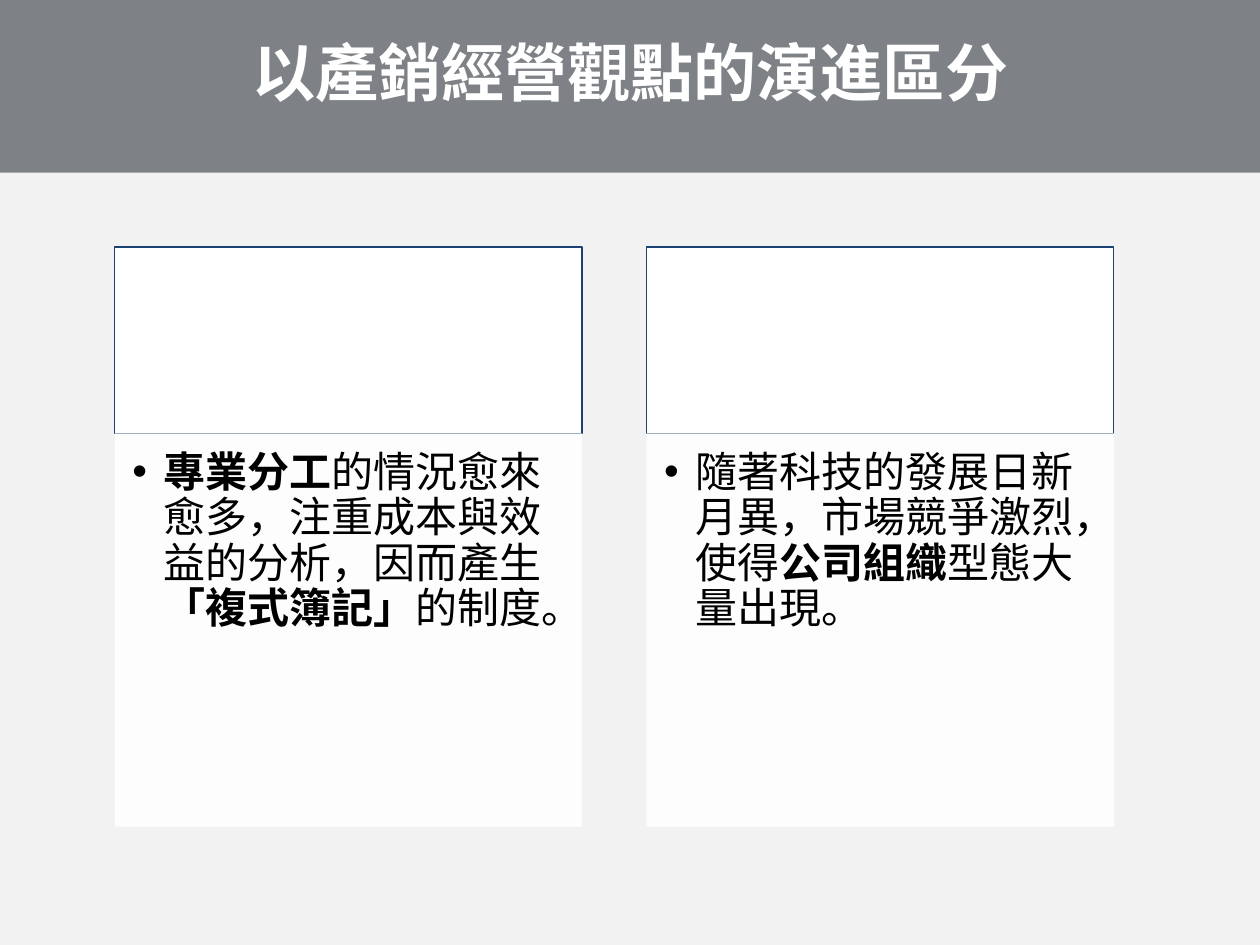
from lxml.etree import SubElement
from pptx import Presentation
from pptx.dml.color import RGBColor
from pptx.enum.shapes import MSO_SHAPE as Shape
from pptx.enum.text import MSO_ANCHOR as Anchor, MSO_AUTO_SIZE as AutoSize, PP_ALIGN as Align
from pptx.oxml.ns import qn
from pptx.util import Inches, Pt

TITLE = "以產銷經營觀點的演進區分"
# Each column is a list of (text, bold) runs.
COLUMNS = [
    [("專業分工", True), ("的情況愈來愈多，注重成本與效益的分析，因而產生", False),
     ("「複式簿記」", True), ("的制度。", False)],
    [("隨著科技的發展日新月異，市場競爭激烈，使得", False),
     ("公司組織", True), ("型態大量出現。", False)],
]
LEFT, COLUMN_STEP, COLUMN_WIDTH = 0.91, 4.22, 3.71
HEADER_TOP, HEADER_HEIGHT, BODY_HEIGHT = 1.96, 1.48, 3.12
TWO_CONTENT_LAYOUT = 3


def color(hex_string):
    return RGBColor.from_string(hex_string)


class SlideBuilder:
    """Holds the style and the current slide."""
    font = "Noto Sans CJK SC"
    background, band = "F2F2F2", "0C141C"
    white, black, outline = "FFFFFF", "000000", "1C4271"

    def __init__(self, presentation):
        layout = presentation.slide_layouts[TWO_CONTENT_LAYOUT]
        self.slide = presentation.slides.add_slide(layout)
        fill = self.slide.background.fill
        fill.solid()
        fill.fore_color.rgb = color(self.background)

    def rectangle(self, box, fill, opacity=100, line=None):
        shape = self.slide.shapes.add_shape(Shape.RECTANGLE, *map(Inches, box))
        shape.shadow.inherit = False
        shape.fill.solid()
        shape.fill.fore_color.rgb = color(fill)
        if opacity < 100:
            fill_color = shape.element.spPr.find(qn("a:solidFill"))[0]
            SubElement(fill_color, qn("a:alpha"), val=str(opacity * 1000))
        if line:
            shape.line.color.rgb = color(line)
            shape.line.width = Pt(0.75)
        else:
            shape.line.fill.background()

    def place(self, placeholder, box):
        """Move a placeholder to its box, in front of the shapes drawn so far."""
        placeholder.left, placeholder.top, placeholder.width, placeholder.height = map(Inches, box)
        placeholder.element.getparent().append(placeholder.element)
        frame = placeholder.text_frame
        frame.word_wrap = True
        frame.auto_size = AutoSize.NONE
        return frame

    def run(self, paragraph, text, size, bold, text_color):
        run = paragraph.add_run()
        run.text = text
        font = run.font
        font.name, font.size, font.bold = self.font, Pt(size), bold
        font.color.rgb = color(text_color)
        SubElement(run._r.get_or_add_rPr(), qn("a:ea"), typeface=self.font)

    def title(self, text, box):
        frame = self.place(self.slide.shapes.title, box)
        frame.vertical_anchor = Anchor.MIDDLE
        paragraph = frame.paragraphs[0]
        paragraph.alignment = Align.CENTER
        self.run(paragraph, text, 36, True, self.white)

    def bullet(self, index, runs, box):
        frame = self.place(self.slide.placeholders[index], box)
        frame.vertical_anchor = Anchor.TOP
        frame.margin_left = frame.margin_top = Inches(0.14)
        frame.margin_right, frame.margin_bottom = Inches(0.19), Inches(0.21)
        paragraph = frame.paragraphs[0]
        paragraph.level = 1
        paragraph.alignment = Align.LEFT
        paragraph.line_spacing = 0.9
        paragraph.space_before, paragraph.space_after = Pt(0), Pt(3.6)
        properties = paragraph._p.get_or_add_pPr()
        properties.set("marL", str(Inches(0.25)))
        properties.set("indent", str(Inches(-0.25)))
        SubElement(properties, qn("a:buChar"), char="•")
        for text, bold in runs:
            self.run(paragraph, text, 24, bold, self.black)

    def column(self, index, runs):
        left = LEFT + index * COLUMN_STEP
        header = (left, HEADER_TOP, COLUMN_WIDTH, HEADER_HEIGHT)
        body = (left, HEADER_TOP + HEADER_HEIGHT, COLUMN_WIDTH, BODY_HEIGHT)
        self.rectangle(header, self.white, line=self.outline)
        self.rectangle(body, self.white, opacity=90)
        self.bullet(index + 1, runs, body)


def main():
    presentation = Presentation()
    presentation.slide_width, presentation.slide_height = Inches(10), Inches(7.5)
    builder = SlideBuilder(presentation)
    builder.rectangle((0, -0.03, 10, 1.4), builder.band, opacity=50)
    builder.title(TITLE, (0, 0.13, 10, 0.87))
    for index, runs in enumerate(COLUMNS):
        builder.column(index, runs)
    presentation.save("out.pptx")


if __name__ == "__main__":
    main()
